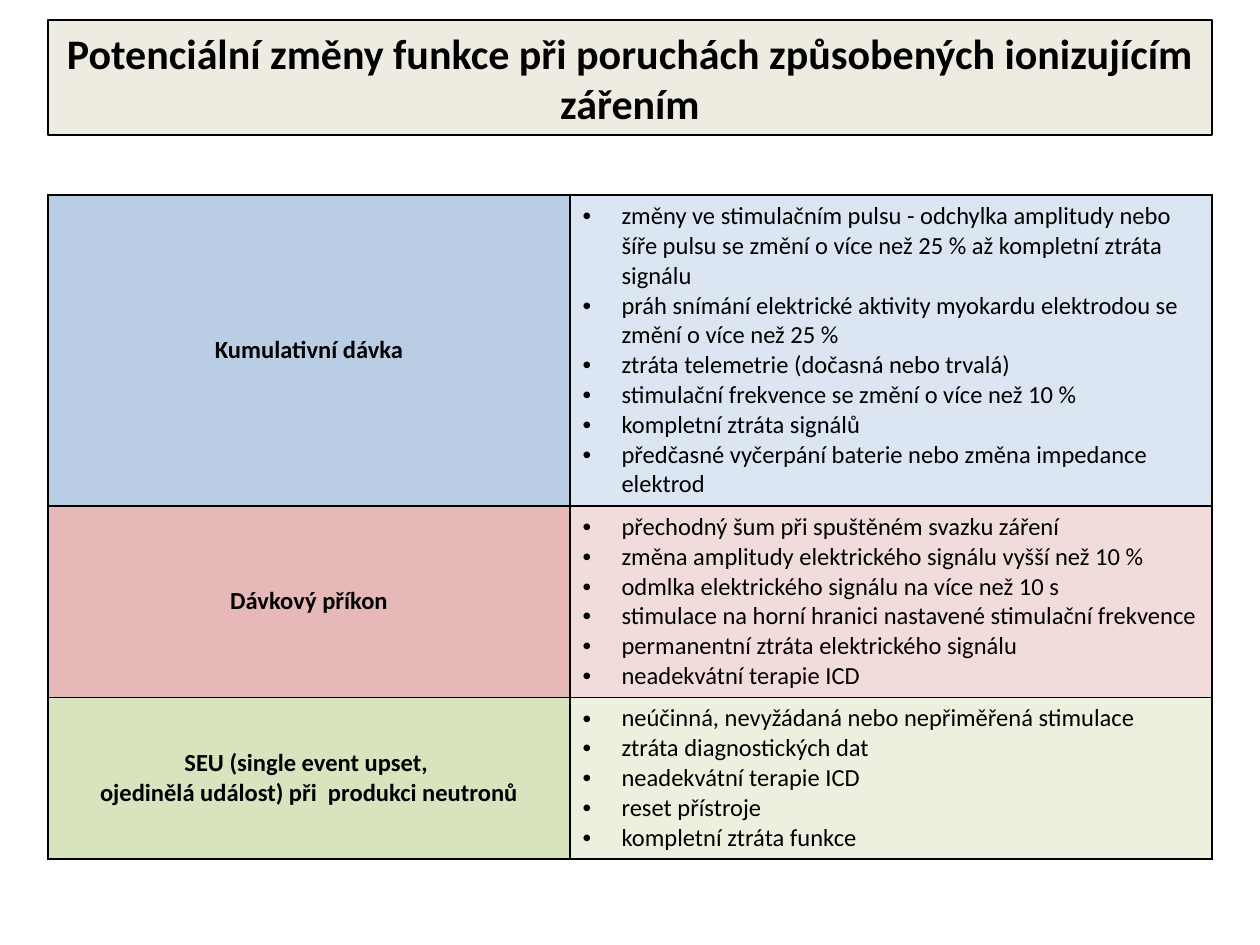
import pptx
import pptx.dml.color
import pptx.enum.shapes
import pptx.enum.text
import pptx.oxml
import pptx.oxml.ns
import pptx.util

PX = 914400 // 126
FONT = "Calibri"
COLORS = {
    "text": "000000", "border": "000000", "title": "EEECE1",
    "blue": "B9CDE5", "light blue": "DCE6F2",
    "red": "E6B9B8", "light red": "F2DCDB",
    "green": "D7E4BD", "light green": "EBF1DE",
}
TITLE = "Potenciální změny funkce při poruchách způsobených ionizujícím zářením"
TITLE_BOX = (48, 20, 1164, 115)
TABLE_LEFT, TABLE_TOP = 48, 195
COLUMN_WIDTHS = [522, 642]
BULLET_INDENT = 39

# cause, colour, row height, vertical anchor of the effects, effects
ROWS = [
    ("Kumulativní dávka", "blue", 306, "TOP", [
        "změny ve stimulačním pulsu - odchylka amplitudy nebo šíře pulsu "
        "se změní o více než 25 % až kompletní ztráta signálu",
        "práh snímání elektrické aktivity myokardu elektrodou se změní o více než 25 %",
        "ztráta telemetrie (dočasná nebo trvalá)",
        "stimulační frekvence se změní o více než 10 %",
        "kompletní ztráta signálů",
        "předčasné vyčerpání baterie nebo změna impedance elektrod",
    ]),
    ("Dávkový příkon", "red", 189, "TOP", [
        "přechodný šum při spuštěném svazku záření",
        "změna amplitudy elektrického signálu vyšší než 10 %",
        "odmlka elektrického signálu na více než 10 s",
        "stimulace na horní hranici nastavené stimulační frekvence",
        "permanentní ztráta elektrického signálu",
        "neadekvátní terapie ICD",
    ]),
    ("SEU (single event upset, \vojedinělá událost) při  produkci neutronů", "green", 160, "MIDDLE", [
        "neúčinná, nevyžádaná nebo nepřiměřená stimulace",
        "ztráta diagnostických dat",
        "neadekvátní terapie ICD",
        "reset přístroje",
        "kompletní ztráta funkce",
    ]),
]


def px(length):
    return pptx.util.Emu(length * PX)


def color(name):
    return pptx.dml.color.RGBColor.from_string(COLORS[name])


def paint(fill, name):
    fill.solid()
    fill.fore_color.rgb = color(name)


def set_font(paragraph, size, bold):
    font = paragraph.font
    font.name, font.size, font.bold = FONT, pptx.util.Pt(size), bold
    font.color.rgb = color("text")


def write_centred(paragraph, text, size):
    paragraph.text = text
    paragraph.alignment = pptx.enum.text.PP_ALIGN.CENTER
    set_font(paragraph, size, True)


def write_bullets(text_frame, items):
    for index, item in enumerate(items):
        paragraph = text_frame.add_paragraph() if index else text_frame.paragraphs[0]
        paragraph.text = item
        properties = paragraph._p.get_or_add_pPr()
        properties.set("marL", str(px(BULLET_INDENT)))
        properties.set("indent", str(-px(BULLET_INDENT)))
        namespace = pptx.oxml.ns.nsdecls("a")
        properties.append(pptx.oxml.parse_xml(f'<a:buFont {namespace} typeface="Arial"/>'))
        properties.append(pptx.oxml.parse_xml(f'<a:buChar {namespace} char="•"/>'))
        set_font(paragraph, 14, False)


def add_borders(cell):
    properties = cell._tc.get_or_add_tcPr()
    for index, side in enumerate(["lnL", "lnR", "lnT", "lnB"]):
        properties.insert(index, pptx.oxml.parse_xml(
            f'<a:{side} {pptx.oxml.ns.nsdecls("a")} w="{pptx.util.Pt(1)}"><a:solidFill>'
            f'<a:srgbClr val="{COLORS["border"]}"/></a:solidFill></a:{side}>'))


def add_title(slide):
    shape = slide.shapes.add_shape(
        pptx.enum.shapes.MSO_SHAPE.RECTANGLE, *map(px, TITLE_BOX))
    shape.shadow.inherit = False
    paint(shape.fill, "title")
    shape.line.color.rgb = color("border")
    shape.line.width = pptx.util.Pt(0.75)
    shape.text_frame.word_wrap = True
    write_centred(shape.text_frame.paragraphs[0], TITLE, 24)


def add_effects_table(slide):
    table = slide.shapes.add_table(
        len(ROWS), len(COLUMN_WIDTHS), px(TABLE_LEFT), px(TABLE_TOP),
        px(sum(COLUMN_WIDTHS)), px(sum(row[2] for row in ROWS))).table
    table.first_row = table.horz_banding = False
    for column, width in zip(table.columns, COLUMN_WIDTHS):
        column.width = px(width)
    for row, (cause, hue, height, anchor, effects) in zip(table.rows, ROWS):
        row.height = px(height)
        cause_cell, effects_cell = row.cells
        write_centred(cause_cell.text_frame.paragraphs[0], cause, 14)
        write_bullets(effects_cell.text_frame, effects)
        cause_cell.vertical_anchor = pptx.enum.text.MSO_ANCHOR.MIDDLE
        effects_cell.vertical_anchor = pptx.enum.text.MSO_ANCHOR[anchor]
        for cell, name in [(cause_cell, hue), (effects_cell, f"light {hue}")]:
            paint(cell.fill, name)
            add_borders(cell)


def main():
    presentation = pptx.Presentation()
    presentation.slide_width = pptx.util.Inches(10)
    presentation.slide_height = pptx.util.Inches(7.5)
    slide = presentation.slides.add_slide(presentation.slide_layouts[6])
    add_title(slide)
    add_effects_table(slide)
    presentation.save("out.pptx")


if __name__ == "__main__":
    main()
